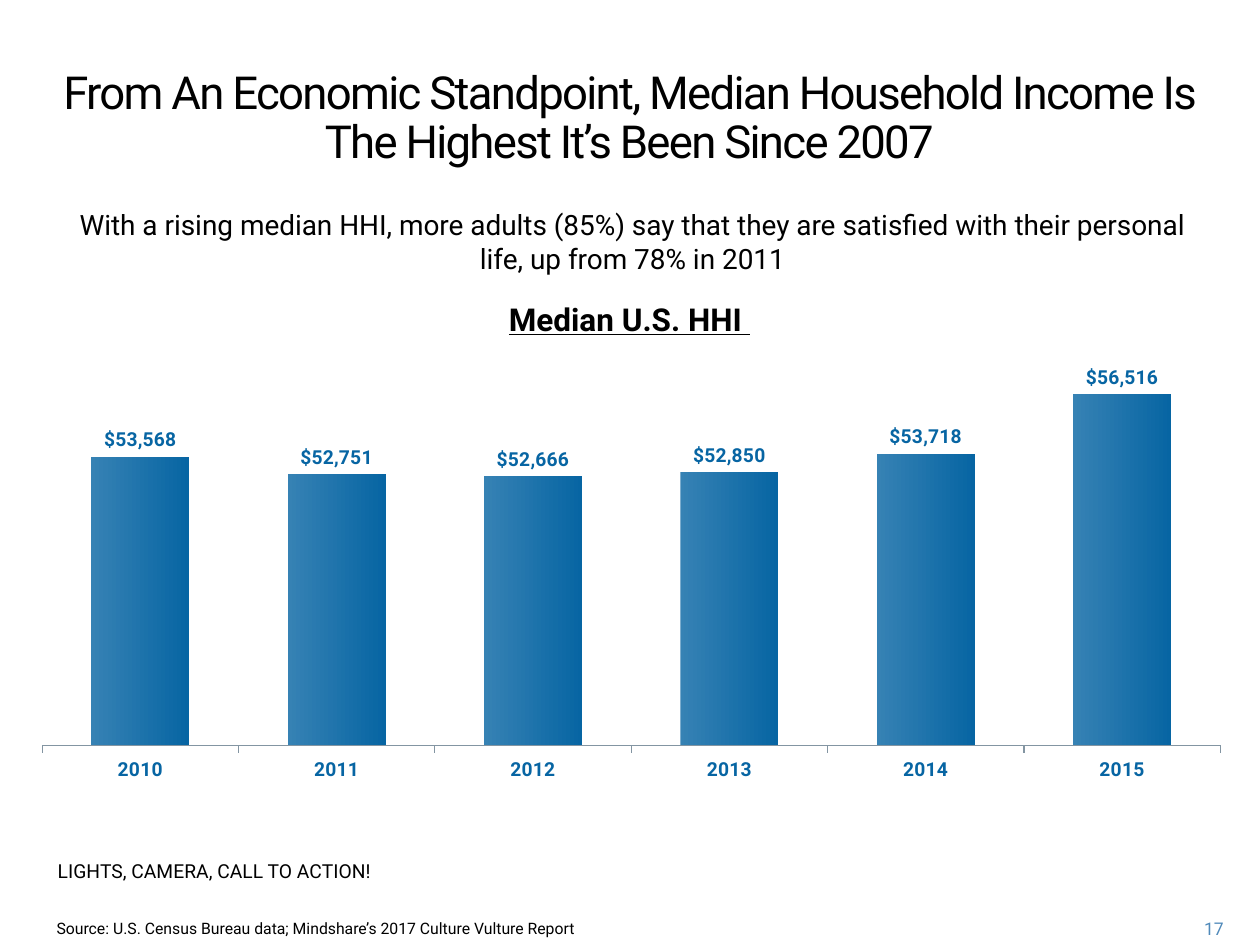
from lxml import etree
from pptx import Presentation
from pptx.chart.data import CategoryChartData
from pptx.dml.color import RGBColor
from pptx.enum.chart import XL_CHART_TYPE, XL_LABEL_POSITION, XL_TICK_LABEL_POSITION, XL_TICK_MARK
from pptx.enum.text import MSO_ANCHOR, MSO_AUTO_SIZE, PP_ALIGN
from pptx.oxml.ns import qn
from pptx.util import Inches, Pt

LEFT, CENTER, RIGHT = PP_ALIGN.LEFT, PP_ALIGN.CENTER, PP_ALIGN.RIGHT
COLUMNS = XL_CHART_TYPE.COLUMN_CLUSTERED
OUTSIDE_END = XL_LABEL_POSITION.OUTSIDE_END
LABELS_LOW = XL_TICK_LABEL_POSITION.LOW
TICK_OUT = XL_TICK_MARK.OUTSIDE
TOP = MSO_ANCHOR.TOP
NO_AUTOFIT = MSO_AUTO_SIZE.NONE

BLACK, BLUE, LIGHT_BLUE, PAGE_BLUE, AXIS_GRAY = "000000", "0765A3", "3682B4", "508ABA", "8395A2"
DOLLARS = '"$"#,##0'
INCOME = {"2010": 53568, "2011": 52751, "2012": 52666,
          "2013": 52850, "2014": 53718, "2015": 56516}


def rgb(color):
    return RGBColor.from_string(color)


def apply(target, values):
    for name, value in values.items():
        setattr(target, name, value)


class SlideBuilder:
    font_name = "Roboto"

    def __init__(self, slide):
        self.slide = slide

    def style_font(self, font, size, color=BLACK, **values):
        apply(font, {"name": self.font_name, "size": Pt(size), **values})
        font.color.rgb = rgb(color)

    def fill_text(self, holder, box, text, size, align=LEFT, color=BLACK,
                  line_spacing=None, tracking=None, **font_values):
        """Place a text holder and write one formatted paragraph in it."""
        apply(holder, dict(zip(("left", "top", "width", "height"), map(Inches, box))))
        frame = holder.text_frame
        apply(frame, {"word_wrap": True, "auto_size": NO_AUTOFIT, "vertical_anchor": TOP})
        paragraph = frame.paragraphs[0]
        apply(paragraph, {"alignment": align, "space_before": Pt(0),
                          "line_spacing": line_spacing})
        run = paragraph.add_run()
        run.text = text
        self.style_font(run.font, size, color, **font_values)
        if tracking is not None:
            run.font._element.set("spc", str(int(tracking * 100)))

    def title(self, *args, **values):
        self.fill_text(self.slide.shapes.title, *args, **values)

    def body(self, *args, **values):
        self.fill_text(self.slide.placeholders[1], *args, **values)

    def label(self, *args, **values):
        self.fill_text(self.slide.shapes.add_textbox(0, 0, 0, 0), *args, **values)

    def column_chart(self, box, series_name, values, plot_box, limits):
        data = CategoryChartData(number_format=DOLLARS)
        data.categories = list(values)
        data.add_series(series_name, list(values.values()))
        chart = self.slide.shapes.add_chart(COLUMNS, *map(Inches, box), data).chart
        apply(chart, {"has_title": False, "has_legend": False})
        self.style_font(chart.font, 18)

        years = chart.category_axis
        apply(years, {"major_tick_mark": TICK_OUT, "tick_label_position": LABELS_LOW,
                      "has_major_gridlines": False})
        self.style_font(years.tick_labels.font, 11, BLUE, bold=True)
        years.format.line.color.rgb = rgb(AXIS_GRAY)
        years.format.line.width = Pt(0.75)
        low, high = limits
        apply(chart.value_axis, {"minimum_scale": low, "maximum_scale": high,
                                 "has_major_gridlines": False, "visible": False})

        plot = chart.plots[0]
        apply(plot, {"gap_width": 100, "overlap": -20, "vary_by_categories": False,
                     "has_data_labels": True})
        labels = plot.data_labels
        apply(labels, {"show_value": True, "number_format": DOLLARS,
                       "number_format_is_linked": False, "position": OUTSIDE_END})
        self.style_font(labels.font, 11, BLUE, bold=True)

        fill = plot.series[0].format.fill
        fill.gradient()
        fill.gradient_angle = 0
        for stop, position, color in zip(fill.gradient_stops, (0, 1), (LIGHT_BLUE, BLUE)):
            stop.position = position
            stop.color.rgb = rgb(color)
        self.place_plot(chart, plot_box)

    def place_plot(self, chart, plot_box):
        """Fix the inner plot area as fractions of the chart frame."""
        area = chart._chartSpace.find(".//" + qn("c:plotArea"))
        for layout in area.findall(qn("c:layout")):
            area.remove(layout)
        layout = etree.Element(qn("c:layout"))
        area.insert(0, layout)
        manual = etree.SubElement(layout, qn("c:manualLayout"))
        settings = [("layoutTarget", "inner"), ("xMode", "edge"), ("yMode", "edge"),
                    *zip("xywh", plot_box)]
        for tag, value in settings:
            etree.SubElement(manual, qn("c:" + tag)).set("val", str(value))


def main():
    presentation = Presentation()
    apply(presentation, {"slide_width": Inches(10), "slide_height": Inches(7.5)})
    builder = SlideBuilder(presentation.slides.add_slide(presentation.slide_layouts[0]))

    builder.title((0.18, 0.5, 9.63, 1.4),
                  "From An Economic Standpoint, Median Household Income Is "
                  "The Highest It’s Been Since 2007",
                  26, CENTER, line_spacing=Pt(28), tracking=-1)
    builder.body((0.47, 1.6, 9.1, 0.72),
                 "With a rising median HHI, more adults (85%) say that they are satisfied "
                 "with their personal life, up from 78% in 2011", 16, CENTER)
    builder.column_chart((0.18, 2.47, 9.66, 3.94), "Series 1", INCOME,
                         plot_box=(0.016, 0.104, 0.968, 0.771), limits=(40000, 58000))
    builder.label((0.18, 2.33, 9.63, 0.4), "Median U.S. HHI ", 18, CENTER,
                  bold=True, underline=True)
    builder.label((0.36, 6.77, 3.08, 0.47), "LIGHTS, CAMERA, CALL TO ACTION!", 11)
    builder.label((0.35, 7.24, 6.08, 0.26),
                  "Source: U.S. Census Bureau data; Mindshare’s 2017 Culture Vulture Report", 9)
    builder.label((9.2, 7.24, 0.61, 0.25), "17", 10, RIGHT, PAGE_BLUE)
    presentation.save("out.pptx")


if __name__ == "__main__":
    main()
